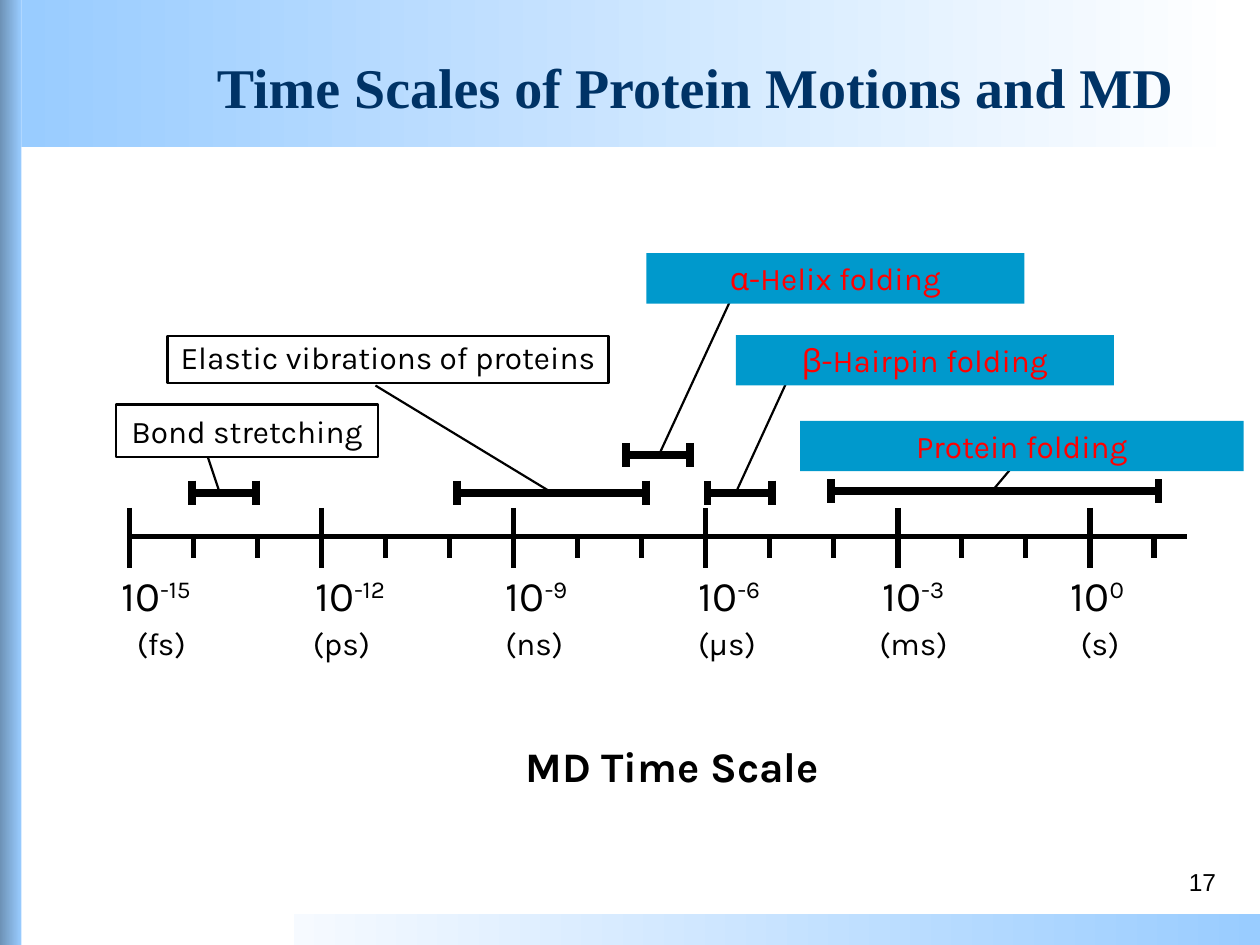
from lxml import etree
from pptx import Presentation
from pptx.dml.color import RGBColor
from pptx.enum.shapes import MSO_CONNECTOR, MSO_SHAPE
from pptx.enum.text import MSO_ANCHOR, PP_ALIGN
from pptx.oxml.ns import qn
from pptx.util import Inches, Pt

STRAIGHT = MSO_CONNECTOR.STRAIGHT
RECTANGLE = MSO_SHAPE.RECTANGLE
TOP, MIDDLE = MSO_ANCHOR.TOP, MSO_ANCHOR.MIDDLE
CENTER, RIGHT = PP_ALIGN.CENTER, PP_ALIGN.RIGHT

BLACK = RGBColor(0x00, 0x00, 0x00)
WHITE = RGBColor(0xFF, 0xFF, 0xFF)
NAVY = RGBColor(0x00, 0x33, 0x66)
SKY = RGBColor(0x99, 0xCC, 0xFF)
STEEL = RGBColor(0x6D, 0x92, 0xB6)
PALE = RGBColor(0xF6, 0xFA, 0xFF)
TEAL = RGBColor(0x00, 0x99, 0xCC)
RED = RGBColor(0xFF, 0x00, 0x00)

COLUMNS, ROWS = 100, 75
AXIS_ROW = 42.6
FIRST_DECADE, DECADE_STEP, DECADES = 10.3, 5.08, 17
CAP_HEIGHT, CAP_INSET = 1.9, 0.15

# exponent, unit, centre column of the power, centre column of the unit
SCALE = [
    ("-15", "(fs)", 12.4, 12.8),
    ("-12", "(ps)", 27.8, 27.1),
    ("-9", "(ns)", 42.6, 42.4),
    ("-6", "(μs)", 57.9, 57.7),
    ("-3", "(ms)", 72.5, 72.5),
    ("0", "(s)", 87.1, 87.3),
]

# label, box, span (from, to, row), leader (from, to), highlighted, line spacing
MOTIONS = [
    ("Bond stretching", (9.2, 32.1, 20.8, 4.2), (15.1, 20.5, 39.1),
     ((16.5, 36.3), (17.5, 39.3)), False, 1),
    ("Elastic vibrations of proteins", (13.3, 26.7, 35, 3.7), (36.1, 51.4, 39.1),
     ((29.8, 30.6), (43.8, 39.1)), False, 0.85),
    ("α-Helix folding", (51.3, 20.1, 30, 4), (49.5, 54.9, 36.1),
     ((57.9, 24), (52.3, 36.1)), True, 1),
    ("β-Hairpin folding", (58.4, 26.6, 30, 4), (56, 61.4, 39.1),
     ((62.4, 30.4), (58.4, 39.1)), True, 1),
    ("Protein folding", (63.5, 33.4, 35.2, 4), (65.8, 92.1, 39),
     ((80.4, 37), (78.8, 38.9)), True, 1),
]


def apply_format(target, values):
    for attribute, value in values.items():
        setattr(target, attribute, value)


class SlideBuilder:
    font_name = "Karla"

    def __init__(self, deck):
        self.slide = deck.slides.add_slide(deck.slide_layouts[6])
        self.column = deck.slide_width / COLUMNS
        self.row = deck.slide_height / ROWS

    def place(self, *lengths):
        """Turn alternating column and row counts into slide lengths."""
        units = (self.column, self.row)
        return [round(length * units[i % 2]) for i, length in enumerate(lengths)]

    def fill_text(self, shape, text, exponent="", anchor=TOP, align=CENTER,
                  spacing=1, color=BLACK, **font_values):
        frame = shape.text_frame
        apply_format(frame, {
            "word_wrap": True, "vertical_anchor": anchor,
            "margin_left": Inches(0.1), "margin_right": Inches(0.1),
            "margin_top": Inches(0.05), "margin_bottom": Inches(0.05),
        })
        paragraph = frame.paragraphs[0]
        apply_format(paragraph, {"alignment": align, "line_spacing": spacing})
        for part, baseline in ((text, 0), (exponent, 30000)):
            if not part:
                continue
            run = paragraph.add_run()
            run.text = part
            apply_format(run.font, {"name": self.font_name, **font_values})
            run.font.color.rgb = color
            if baseline:
                run.font._element.set("baseline", str(baseline))

    def text(self, box, content, **style):
        self.fill_text(self.slide.shapes.add_textbox(*self.place(*box)),
                       content, **style)

    def rectangle(self, box):
        shape = self.slide.shapes.add_shape(RECTANGLE, *self.place(*box))
        shape.shadow.inherit = False
        return shape

    def band(self, box, start, end):
        shape = self.rectangle(box)
        shape.line.fill.background()
        shape.fill.gradient()
        shape.fill.gradient_angle = 0
        for stop, color in zip(shape.fill.gradient_stops, (start, end)):
            stop.color.rgb = color

    def label(self, box, content, highlighted, spacing):
        shape = self.rectangle(box)
        if highlighted:
            shape.fill.solid()
            shape.fill.fore_color.rgb = TEAL
            shape.line.fill.background()
        else:
            shape.fill.background()
            shape.line.color.rgb = BLACK
            shape.line.width = Pt(1.25)
        self.fill_text(shape, content, anchor=MIDDLE, spacing=spacing,
                       color=RED if highlighted else BLACK, size=Pt(18))

    def line(self, start, end, width):
        connector = self.slide.shapes.add_connector(
            STRAIGHT, *self.place(*start, *end))
        connector.line.color.rgb = BLACK
        connector.line.width = Pt(width)
        etree.SubElement(connector._element.spPr, qn("a:effectLst"))

    def span(self, left, right, row):
        """Draw a heavy bar with a cap at each end."""
        self.line((left, row), (right, row), 4.5)
        for column in (left + CAP_INSET, right - CAP_INSET):
            self.line((column, row - CAP_HEIGHT / 2),
                      (column, row + CAP_HEIGHT / 2), 4.5)

    def axis(self):
        self.line((10.1, AXIS_ROW), (94.2, AXIS_ROW), 3)
        for decade in range(DECADES):
            column = FIRST_DECADE + decade * DECADE_STEP
            above, below = (2.3, 2.5) if decade % 3 == 0 else (0, 1.65)
            self.line((column, AXIS_ROW - above), (column, AXIS_ROW + below), 3)


def main():
    deck = Presentation()
    deck.slide_width, deck.slide_height = Inches(10), Inches(7.5)
    page = SlideBuilder(deck)

    page.band((0, 0, 1.7, 75), STEEL, SKY)
    page.band((1.7, 0, 96.7, 11.7), SKY, WHITE)
    page.band((23.3, 72.5, 76.7, 2.5), PALE, SKY)
    page.text((76.7, 68.3, 20.8, 5), "17", align=RIGHT, name="Arial", size=Pt(14))
    page.text((11.3, 3.5, 87.8, 6.7), "Time Scales of Protein Motions and MD",
              anchor=MIDDLE, color=NAVY, name="Times New Roman",
              size=Pt(32), bold=True)
    page.text((39.2, 58.3, 28.3, 5), "MD Time Scale", size=Pt(24), bold=True)

    page.axis()
    for exponent, unit, power_center, unit_center in SCALE:
        page.text((power_center - 6.5, 44.7, 13, 5), "10",
                  exponent=exponent, size=Pt(24))
        page.text((unit_center - 8.6, 49, 17.2, 4), unit, size=Pt(18))

    for name, box, span, leader, highlighted, spacing in MOTIONS:
        page.span(*span)
        page.line(*leader, 1.25)
        page.label(box, name, highlighted, spacing)

    deck.save("out.pptx")


if __name__ == "__main__":
    main()
